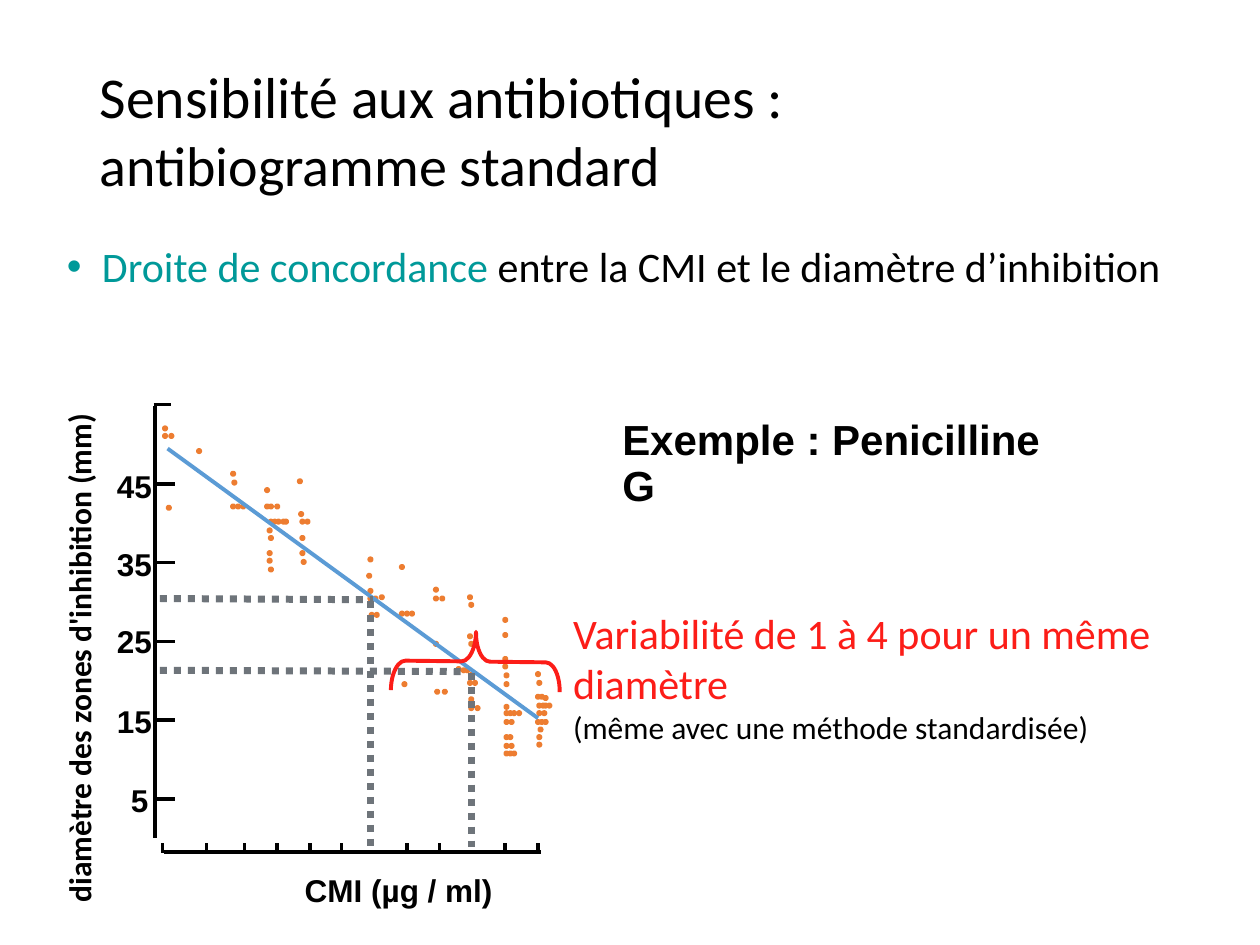
"""Build the slide on the line linking MIC and inhibition diameter."""
from pptx import Presentation
from pptx.dml.color import RGBColor as Rgb
from pptx.enum.dml import MSO_LINE as Dash
from pptx.enum.shapes import MSO_CONNECTOR as Link, MSO_SHAPE as Kind
from pptx.enum.text import MSO_ANCHOR as Anchor, MSO_AUTO_SIZE as Fit, PP_ALIGN as Align
from pptx.util import Cm, Pt
from lxml.etree import SubElement as Sub
from pptx.oxml.ns import qn

BLACK = Rgb(0, 0, 0)
TEAL = Rgb(0x00, 0x99, 0x99)
RED = Rgb(0xFC, 0x1D, 0x18)
BLUE = Rgb(0x5B, 0x9B, 0xD5)
GREY = Rgb(0x6E, 0x74, 0x7A)
AMBER = Rgb(0xFE, 0x9B, 0x03)
RUST = Rgb(0xED, 0x7D, 0x31)

INCH = 2.54
DOT = 0.02

TITLE = [[("Sensibilité aux antibiotiques :\v", 33, BLACK), ("antibiogramme standard", 32, BLACK)]]
BODY = [[("Droite de concordance", 24, TEAL),
         (" entre la CMI et le diamètre d’inhibition", 24, BLACK)]]
NOTE = [[("Variabilité de 1 à 4 pour un même diamètre", 24, RED)],
        [("(même avec une méthode standardisée)", 18, BLACK)]]
LABELS = [
    ("45", 18, "Arial", (0.83, 3.69, 0.48, 0.37), 0),
    ("35", 18, "Arial", (0.83, 4.31, 0.48, 0.37), 0),
    ("25", 18, "Arial", (0.83, 4.92, 0.48, 0.37), 0),
    ("15", 18, "Arial", (0.83, 5.56, 0.48, 0.37), 0),
    ("5", 18, "Arial", (0.94, 6.18, 0.34, 0.37), 0),
    ("Exemple : Penicilline\vG", 24, "Arial", (4.84, 3.28, 3.95, 0.46), 0),
    ("CMI (µg / ml)", 18, "Arial", (2.32, 6.9, 1.69, 0.37), 0),
    ("diamètre des zones d'inhibition (mm)", 18, "Calibri", (-1.66, 4.77, 4.61, 0.37), 270),
]
DOTS = {
    3.39: [1.3], 3.45: [1.3, 1.35], 3.57: [1.57], 3.75: [1.84], 3.81: [2.37],
    3.82: [1.85], 3.88: [2.11], 4.01: [1.84, 1.88, 1.92, 2.11, 2.14, 2.19],
    4.02: [1.33], 4.07: [2.38], 4.13: [2.43, 2.39, 2.26, 2.24, 2.2, 2.17, 2.14],
    4.2: [2.13], 4.26: [2.14, 2.39], 4.38: [2.39, 2.13], 4.44: [2.13],
    4.45: [2.4], 4.51: [2.14], 4.43: [2.93], 4.49: [3.18], 4.56: [2.92],
    4.67: [3.45], 4.68: [2.93], 4.73: [3.02, 3.72],
    4.74: [2.97, 2.93, 3.45, 3.5], 4.79: [3.73], 4.86: [3.18, 3.22, 3.26],
    4.87: [2.94, 2.98], 4.91: [4], 5.03: [4], 5.04: [3.72], 5.1: [3.73, 3.45],
    5.22: [4], 5.28: [4], 5.3: [3.63], 5.31: [3.67, 3.7], 5.34: [3.74, 4.26],
    5.35: [4.01], 5.41: [3.72, 3.76, 4.27], 5.42: [3.2, 4.01],
    5.48: [3.46, 3.52], 5.52: [4.26, 4.29], 5.53: [4.32], 5.54: [3.73],
    5.59: [4.27, 4.3, 4.32, 4.35], 5.6: [4.01], 5.61: [3.73, 3.78],
    5.65: [4.27, 4.31, 4.01, 4.04, 4.07, 4.11],
    5.72: [4.01, 4.05, 4.26, 4.29, 4.32], 5.78: [4.28],
    5.84: [4.27, 4.01, 4.04], 5.9: [4.27], 5.91: [4.01, 4.05],
    5.97: [4.01, 4.04, 4.07],
}
TREND = (1.33, 3.56, 4.27, 5.7)
SIDE = [(1.23, 3.22, 1.23, 6.65), (1.22, 3.21, 1.36, 3.21)]
SIDE += [(1.24, 3.84 + 0.625 * i, 1.39, 3.84 + 0.625 * i) for i in range(5)]
TICKS = [1.29, 1.64, 1.94, 2.2, 2.46, 2.71, 3.23, 3.49, 4.01, 4.27]
BASE = [(1.3, 6.76, 4.29, 6.76)] + [(x, 6.77, x, 6.69) for x in TICKS]
GUIDES = [(2.94, 4.77, 2.94, 6.73), (3.74, 5.34, 3.74, 6.72),
          (1.27, 5.32, 3.71, 5.33), (1.27, 4.75, 2.96, 4.76)]


def scale(nums):
    return [Cm(n * INCH) for n in nums]


def style(item, form):
    for key, val in form.items():
        setattr(item, key, val)


def place(shape, area):
    style(shape, dict(zip(("left", "top", "width", "height"), scale(area))))


def write(frame, paras, face="Calibri", bold=False, form=None):
    for i, runs in enumerate(paras):
        para = frame.add_paragraph() if i else frame.paragraphs[0]
        style(para, {"alignment": Align.LEFT, **(form or {})})
        for text, size, color in runs:
            for j, part in enumerate(text.split("\v")):
                if j:
                    para.add_line_break()
                if part:
                    run = para.add_run()
                    run.text = part
                    style(run.font, {"name": face, "size": Pt(size), "bold": bold})
                    run.font.color.rgb = color


def rule(shapes, ends, color=BLACK, width=2, dash=None):
    line = shapes.add_connector(Link.STRAIGHT, *scale(ends))
    style(line.line, {"width": Pt(width), "dash_style": dash})
    line.line.color.rgb = color
    Sub(line.element.spPr, qn("a:effectLst"))


def draw_dot(shapes, x, y):
    dot = shapes.add_shape(Kind.OVAL, *scale((x, y, DOT, DOT)))
    dot.shadow.inherit = False
    dot.fill.solid()
    dot.fill.fore_color.rgb = AMBER
    dot.line.color.rgb = RUST
    dot.line.width = Pt(2)


def draw_brace(shapes):
    brace = shapes.add_shape(Kind.RIGHT_BRACE, *scale((3.54, 4.58, 0.47, 1.34)))
    brace.shadow.inherit = False
    brace.fill.background()
    brace.line.color.rgb = RED
    brace.line.width = Pt(2.25)
    brace.rotation = 90.7
    brace.adjustments[0] = 0.24
    brace.element.spPr.xfrm.set("flipH", "1")


def add_text(shapes, area, wrap):
    box = shapes.add_textbox(*scale(area))
    style(box.text_frame, {"word_wrap": wrap, "auto_size": Fit.SHAPE_TO_FIT_TEXT})
    return box


def main():
    deck = Presentation()
    deck.slide_width, deck.slide_height = scale((10, 7.5))
    slide = deck.slides.add_slide(deck.slide_layouts[1])
    shapes = slide.shapes

    title, body = slide.placeholders
    place(title, (0.69, 0.3, 8.62, 1.45))
    title.text_frame.vertical_anchor = Anchor.MIDDLE
    write(title.text_frame, TITLE)
    place(body, (0.43, 1.86, 9, 4.82))
    write(body.text_frame, BODY)
    props = body.text_frame.paragraphs[0]._p.get_or_add_pPr()
    props.set("marL", str(Cm(0.71)))
    props.set("indent", str(Cm(-0.71)))

    for y, row in DOTS.items():
        for x in row:
            draw_dot(shapes, x, y)
    rule(shapes, TREND, BLUE, 2.25)
    for ends in SIDE:
        rule(shapes, ends)
    group = shapes.add_group_shape()
    for ends in BASE:
        rule(group.shapes, ends)
    for ends in GUIDES:
        rule(shapes, ends, GREY, 4, Dash.ROUND_DOT)

    for text, size, face, area, turn in LABELS:
        box = add_text(shapes, area, False)
        box.rotation = turn
        write(box.text_frame, [[(text, size, BLACK)]], face, True, {"line_spacing": 0.9})
    draw_brace(shapes)
    write(add_text(shapes, (4.45, 4.77, 5.04, 1.2), True).text_frame, NOTE)
    deck.save("out.pptx")


if __name__ == "__main__":
    main()
